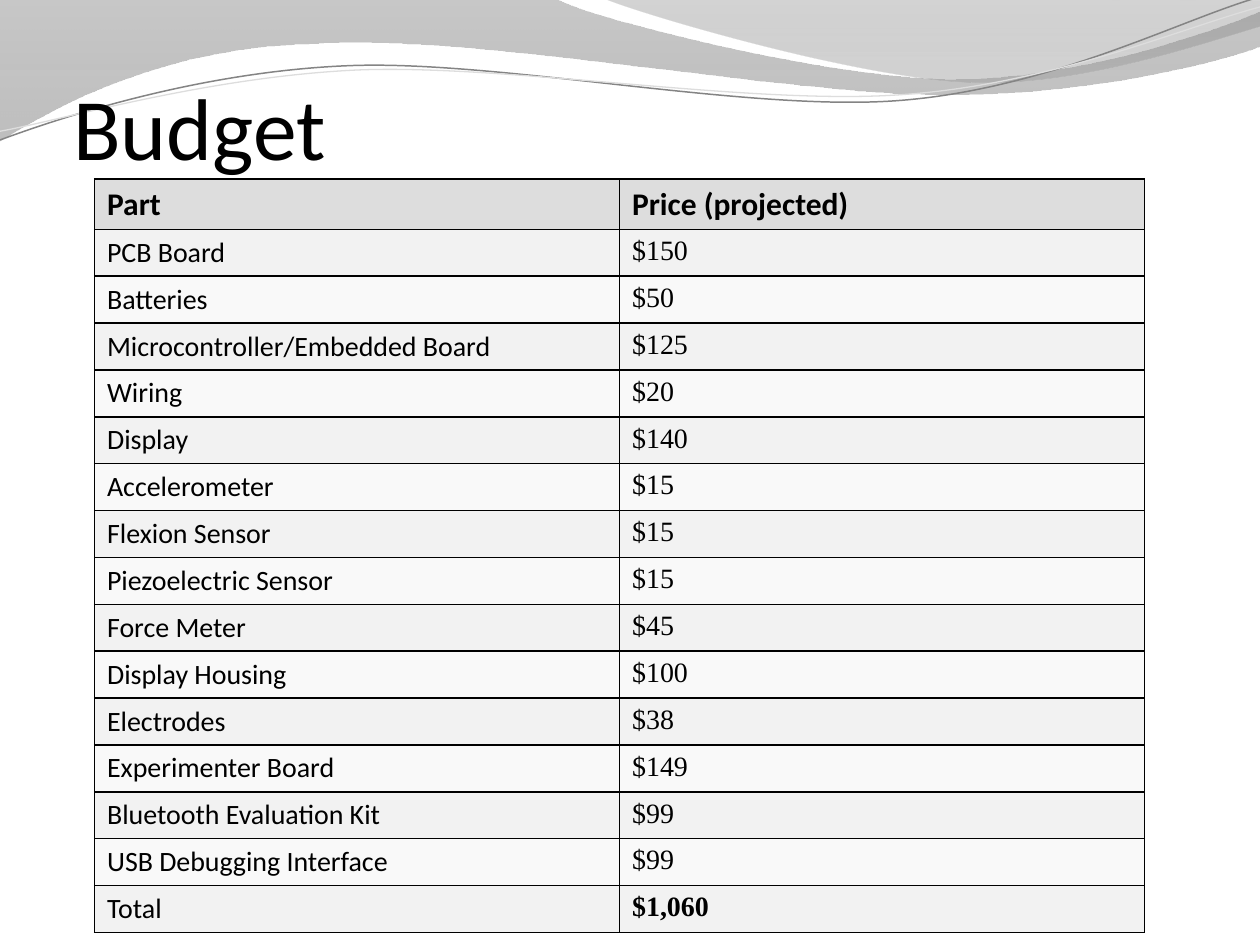
from lxml import etree
from pptx import Presentation, util as u
from pptx.dml.color import RGBColor
from pptx.enum import text
from pptx.oxml.ns import qn

BLACK = RGBColor(0, 0, 0)
HEADER = RGBColor(0xDD, 0xDD, 0xDD)
BANDS = [RGBColor(0xF9, 0xF9, 0xF9), RGBColor(0xF2, 0xF2, 0xF2)]
DARK = RGBColor(0x84, 0x84, 0x84)
GREY = RGBColor(0x88, 0x88, 0x88)
DEEP = RGBColor(0x6F, 0x6F, 0x6F)
PALE = RGBColor(0x9D, 0x9D, 0x9D)

# Each path is a start point, then segments: one point for a line, three for a curve.
# Each gradient stop is position, colour and opacity in percent.
BANDS_OF_WAVE = [
    ([(0, 0), [(317, -1)],
      [(343, 12), (478, 45), (546, 45)], [(614, 45), (690, 19), (720, 6.5)],
      [(721, 26)],
      [(708, 32), (626, 55), (537, 54)], [(448, 54), (275, 20), (185, 24.5)],
      [(93, 26), (33, 60), (-1, 81)], [(0, 0)]],
     [(0, DARK, 45), (1, GREY, 55)]),
    ([(345, -1),
      [(366, 8), (491, 45), (554, 47)], [(616, 50), (692, 23), (720, 15)],
      [(720, 0)], [(345, -1)]],
     [(0, DEEP, 30), (0.8, PALE, 45)]),
]
LINE_ANGLE = 357.3
LINES_OF_WAVE = [
    ([(-1.4, 63), [(34.2, 51.7), (114.3, 29.4), (199.4, 30)],
      [(284.4, 30.5), (425.9, 67.2), (512.1, 64.7)],
      [(599.3, 62.3), (676.1, 25.9), (720.6, 15.5)]],
     DARK, 0.85),
    ([(-1.1, 58), [(33.1, 53.6), (118.2, 32.6), (204.3, 32.7)],
      [(290.4, 33.2), (429.1, 63.8), (515.3, 61.4)],
      [(601.5, 59.4), (678.9, 30), (721.4, 21)]],
     HEADER, 0.75),
]

BUDGET = [
    ("Part", "Price (projected)"),
    ("PCB Board", "$150"),
    ("Batteries", "$50"),
    ("Microcontroller/Embedded Board", "$125"),
    ("Wiring", "$20"),
    ("Display", "$140"),
    ("Accelerometer", "$15"),
    ("Flexion Sensor", "$15"),
    ("Piezoelectric Sensor", "$15"),
    ("Force Meter", "$45"),
    ("Display Housing", "$100"),
    ("Electrodes", "$38"),
    ("Experimenter Board", "$149"),
    ("Bluetooth Evaluation Kit", "$99"),
    ("USB Debugging Interface", "$99"),
    ("Total", "$1,060"),
]


def add_outline(s, path, x, y, close):
    """Build the outline through its end points, then bend the curved segments."""
    start, *segments = path
    builder = s.shapes.build_freeform(u.Pt(x + start[0]), u.Pt(y + start[1]))
    ends = [(u.Pt(x + seg[-1][0]), u.Pt(y + seg[-1][1])) for seg in segments]
    builder.add_line_segments(ends, close=close)
    sp = builder.convert_to_shape()
    sp.shadow.inherit = False
    for line, segment in zip(list(sp._element.iter(qn("a:lnTo"))), segments):
        if len(segment) == 3:
            curve = etree.Element(qn("a:cubicBezTo"))
            for px, py in segment:
                etree.SubElement(curve, qn("a:pt"), x=str(u.Pt(x + px) - sp.left),
                                 y=str(u.Pt(y + py) - sp.top))
            line.getparent().replace(line, curve)
    return sp


def add_wave(s, x, y):
    # Translucent bands
    for path, stops in BANDS_OF_WAVE:
        sp = add_outline(s, path, x, y, True)
        sp.line.fill.background()
        sp.fill.gradient()
        sp.fill.gradient_angle = 270
        for stop, (position, color, _) in zip(sp.fill.gradient_stops, stops):
            stop.position = position
            stop.color.rgb = color
        for clr, (_, _, opacity) in zip(sp._element.spPr.iter(qn("a:srgbClr")), stops):
            etree.SubElement(clr, qn("a:alpha"), val=str(opacity * 1000))
    # Thin lines
    for path, color, width in LINES_OF_WAVE:
        sp = add_outline(s, path, x, y, False)
        sp.rotation = LINE_ANGLE
        sp.fill.background()
        sp.line.color.rgb = color
        sp.line.width = u.Pt(width)


def style(p, size, font, bold=False):
    p.font.size, p.font.name, p.font.bold = u.Pt(size), font, bold
    p.font.color.rgb = BLACK


def add_title(s, x, y, w, h):
    tf = s.shapes.add_textbox(u.Pt(x), u.Pt(y), u.Pt(w), u.Pt(h)).text_frame
    tf.word_wrap = True
    tf.vertical_anchor = text.MSO_ANCHOR.BOTTOM
    tf.margin_left = tf.margin_right = tf.margin_bottom = 0
    p = tf.paragraphs[0]
    p.text = "Budget"
    style(p, 50, "Calibri")


def add_borders(cell):
    tcPr = cell._tc.get_or_add_tcPr()
    for side in ("lnL", "lnR", "lnT", "lnB"):
        ln = etree.SubElement(tcPr, qn("a:" + side), w=str(u.Pt(1)))
        fill = etree.SubElement(ln, qn("a:solidFill"))
        etree.SubElement(fill, qn("a:srgbClr"), val=str(BLACK))


def add_budget(s, x, y, w, h):
    table = s.shapes.add_table(len(BUDGET), 2, u.Pt(x), u.Pt(y), u.Pt(w), u.Pt(h)).table
    for column in table.columns:
        column.width = u.Pt(w / 2)
    for i, row in enumerate(BUDGET):
        table.rows[i].height = u.Pt(h / len(BUDGET))
        for j, value in enumerate(row):
            cell = table.cell(i, j)
            add_borders(cell)
            cell.fill.solid()
            cell.fill.fore_color.rgb = BANDS[i % 2] if i else HEADER
            p = cell.text_frame.paragraphs[0]
            p.text = value
            if i == 0:
                style(p, 18, "Calibri", True)
            elif j == 0:
                style(p, 16, "Calibri")
            else:
                style(p, 16, "Times New Roman", row[0] == "Total")


def main():
    prs = Presentation()
    prs.slide_width, prs.slide_height = u.Pt(720), u.Pt(540)
    s = prs.slides.add_slide(prs.slide_layouts[6])
    add_wave(s, 0, 0)
    add_title(s, 42, 12, 648, 90)
    add_budget(s, 54, 102.2, 600, 428.8)
    prs.save("out.pptx")


if __name__ == "__main__":
    main()
